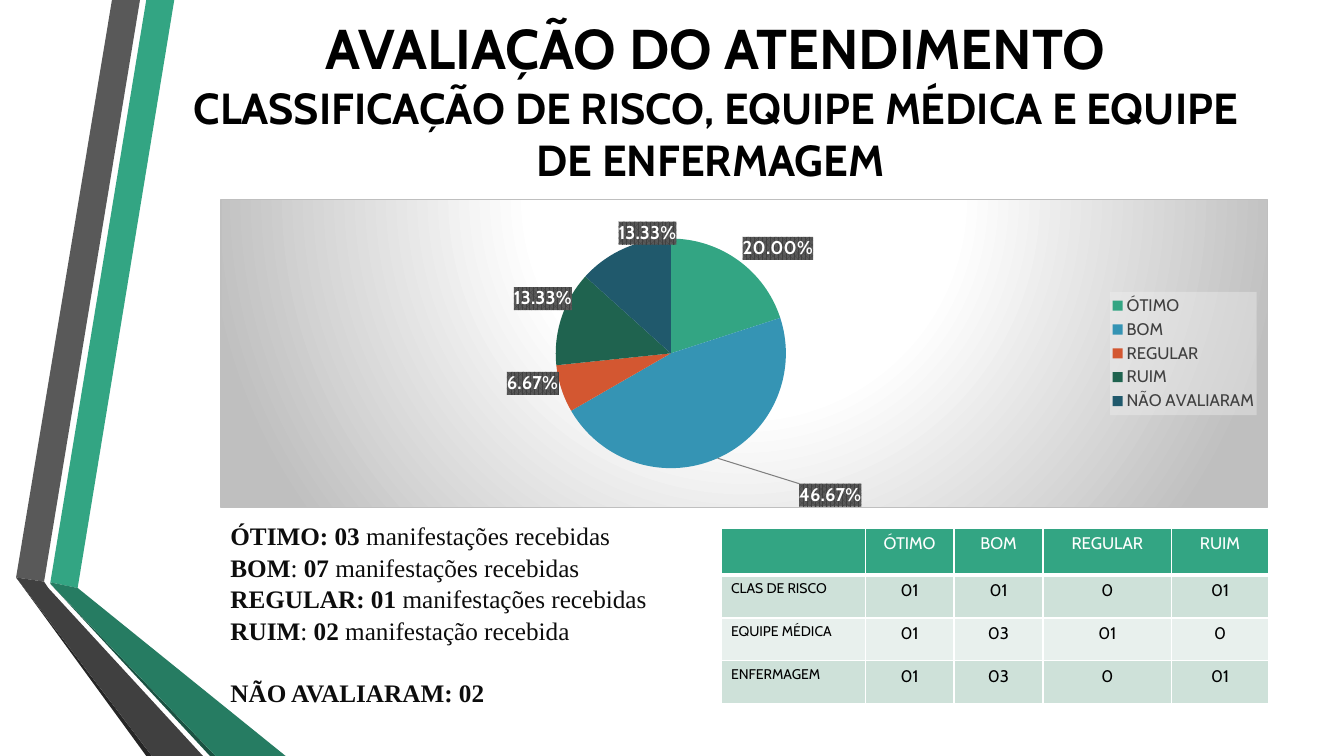
from dataclasses import dataclass

from lxml import etree
from pptx import Presentation
from pptx.chart.data import CategoryChartData
from pptx.dml.color import RGBColor
from pptx.enum.chart import XL_CHART_TYPE, XL_LEGEND_POSITION
from pptx.enum.text import MSO_ANCHOR, PP_ALIGN
from pptx.oxml import parse_xml
from pptx.util import Pt

PIE = XL_CHART_TYPE.PIE
RIGHT = XL_LEGEND_POSITION.RIGHT
MIDDLE = MSO_ANCHOR.MIDDLE
LEFT, CENTER = PP_ALIGN.LEFT, PP_ALIGN.CENTER
NS_A = "http://schemas.openxmlformats.org/drawingml/2006/main"
NS_C = "http://schemas.openxmlformats.org/drawingml/2006/chart"
NS = f'xmlns:a="{NS_A}" xmlns:c="{NS_C}"'


@dataclass(frozen=True)
class Theme:
    sans: str = "Cabin"
    serif: str = "Times New Roman"
    black: str = "000000"
    white: str = "FFFFFF"
    green: str = "33A583"
    ink: str = "0D0D0D"
    gray: str = "404040"
    edge: str = "BFBFBF"
    slices: tuple = ("33A583", "3594B4", "D35731", "1F634F", "20596C")
    rows: tuple = ("CEE1D9", "E8F0ED")
    head: float = 40
    sub: float = 31
    body: float = 18
    label: float = 13.3
    cell: float = 12
    small: float = 10


T = Theme()

# Fill and corners of each band, in points from the top left of the slide
BANDS = [
    (T.green, [(36, 416), (55.5, 420), (124.5, 0), (104.5, 0)]),
    ("595959", [(100, 0), (80, 0), (11.5, 412.5), (31.5, 415.5)]),
    ("262626", [(11.5, 412.5), (104.5, 540), (108.5, 540)]),
    ("1A5242", [(36, 417), (150, 540), (154, 540)]),
    ("267C62", [(36, 416), (36, 417), (154, 540), (204, 540), (55.5, 420)]),
    (T.gray, [(145, 540), (34.5, 420), (31.5, 415.5), (11.5, 412.5), (108.5, 540)]),
]

# Name, share in percent, shift of the label from the slice centre
VOTES = [
    ("ÓTIMO", 20, (0.07, -0.19)),
    ("BOM", 46.67, (0.13, 0.29)),
    ("REGULAR", 6.67, (-0.08, 0.04)),
    ("RUIM", 13.33, (-0.07, -0.12)),
    ("NÃO AVALIARAM", 13.33, (0, -0.22)),
]

# Lines of (text, bold) runs
NOTES = [
    [("ÓTIMO: 03 ", True), ("manifestações recebidas", False)],
    [("BOM", True), (": ", False), ("07 ", True), ("manifestações recebidas", False)],
    [("REGULAR: 01 ", True), ("manifestações recebidas", False)],
    [("RUIM", True), (": ", False), ("02 ", True), ("manifestação recebida", False)],
    [("NÃO AVALIARAM: 02", True)],
]

GRID = [
    ["", "ÓTIMO", "BOM", "REGULAR", "RUIM"],
    ["CLAS DE RISCO", "01", "01", "0", "01"],
    ["EQUIPE MÉDICA", "01", "03", "01", "0"],
    ["ENFERMAGEM", "01", "03", "0", "01"],
]
WIDTHS = [103, 63.5, 63.5, 92, 69]
HEIGHTS = [33.5, 30.5, 30.5, 30.5]


def style(font, size, color, bold=False, face=T.sans):
    font.name, font.size, font.bold = face, Pt(size), bold
    font.color.rgb = RGBColor.from_string(color)


def add_run(para, text, *look):
    run = para.add_run()
    run.text = text
    style(run.font, *look)


def add_frame(slide, box):
    frame = slide.shapes.add_textbox(*map(Pt, box)).text_frame
    frame.word_wrap = True
    return frame


def add_bands(slide, left, top):
    for color, dots in BANDS:
        spots = [(Pt(left + x), Pt(top + y)) for x, y in dots]
        pen = slide.shapes.build_freeform(*spots[0])
        pen.add_line_segments(spots[1:])
        band = pen.convert_to_shape()
        band.shadow.inherit = False
        band.fill.solid()
        band.fill.fore_color.rgb = RGBColor.from_string(color)
        band.line.fill.background()


def add_title(slide, box):
    frame = add_frame(slide, box)
    frame.vertical_anchor = MIDDLE
    para = frame.paragraphs[0]
    para.alignment = CENTER
    add_run(para, "AVALIAÇÃO DO ATENDIMENTO", T.head, T.black, True)
    para.add_line_break()
    add_run(para, "CLASSIFICAÇÃO DE RISCO, EQUIPE MÉDICA E EQUIPE DE ENFERMAGEM ",
            T.sub, T.black, True)


def solid(color, alpha=100):
    return (f'<a:solidFill><a:srgbClr val="{color}">'
            f'<a:alpha val="{alpha * 1000}"/></a:srgbClr></a:solidFill>')


def place(x, y, size=None, inner=False):
    """Manual chart layout: a shift, or with a size a fixed place."""
    target = '<c:layoutTarget val="inner"/>' if inner else ""
    modes = '<c:xMode val="edge"/><c:yMode val="edge"/>' if size else ""
    span = f'<c:w val="{size[0]}"/><c:h val="{size[1]}"/>' if size else ""
    return parse_xml(f'<c:layout {NS}><c:manualLayout>{target}{modes}<c:x val="{x}"/>'
                     f'<c:y val="{y}"/>{span}</c:manualLayout></c:layout>')


def make_labels():
    look = (
        '<c:numFmt formatCode="0.00%" sourceLinked="0"/><c:spPr><a:pattFill prst="pct75">'
        f'<a:fgClr><a:srgbClr val="{T.gray}"/></a:fgClr>'
        '<a:bgClr><a:srgbClr val="595959"/></a:bgClr></a:pattFill></c:spPr>'
        f'<c:txPr><a:bodyPr/><a:p><a:pPr><a:defRPr sz="{round(T.label * 100)}" b="1">'
        f'{solid(T.white)}<a:latin typeface="{T.sans}"/></a:defRPr></a:pPr>'
        '<a:endParaRPr lang="pt-BR"/></a:p></c:txPr><c:dLblPos val="ctr"/>'
        '<c:showLegendKey val="0"/><c:showVal val="0"/><c:showCatName val="0"/>'
        '<c:showSerName val="0"/><c:showPercent val="1"/><c:showBubbleSize val="0"/>')
    items = "".join(
        f'<c:dLbl><c:idx val="{i}"/>{etree.tostring(place(*shift)).decode()}{look}</c:dLbl>'
        for i, (_, _, shift) in enumerate(VOTES))
    lead = (f'<c:showLeaderLines val="1"/><c:leaderLines><c:spPr><a:ln w="9525">'
            f'{solid("7F7F7F")}</a:ln></c:spPr></c:leaderLines>')
    return parse_xml(f'<c:dLbls {NS}>{items}{look}{lead}</c:dLbls>')


def add_pie(slide, box):
    data = CategoryChartData()
    data.categories = [vote[0] for vote in VOTES]
    data.add_series("Series 1", [vote[1] for vote in VOTES])
    chart = slide.shapes.add_chart(PIE, *map(Pt, box), data).chart
    style(chart.font, T.small, T.black)
    chart.has_title = False
    plot = chart.plots[0]
    plot.vary_by_categories = True
    series = plot.series[0]
    for i, color in enumerate(T.slices):
        fill = series.points[i].format.fill
        fill.solid()
        fill.fore_color.rgb = RGBColor.from_string(color)
    series._element.find(f"{{{NS_C}}}cat").addprevious(make_labels())

    chart.has_legend = True
    legend = chart.legend
    legend.position, legend.include_in_layout = RIGHT, False
    style(legend.font, T.cell, T.gray)
    root = legend._element
    for old in root.findall(f"{{{NS_C}}}layout"):
        root.remove(old)
    root.find(f"{{{NS_C}}}legendPos").addnext(place(0.85, 0.3, (0.14, 0.4)))
    root.find(f"{{{NS_C}}}txPr").addprevious(
        parse_xml(f'<c:spPr {NS}>{solid("F2F2F2", 39)}</c:spPr>'))

    body = chart._chartSpace.find(f"{{{NS_C}}}chart")
    area = body.find(f"{{{NS_C}}}plotArea")
    for old in area.findall(f"{{{NS_C}}}layout"):
        area.remove(old)
    area.insert(0, place(0.32, 0.12, (0.22, 0.76), True))
    stops = "".join(f'<a:gs pos="{at}000"><a:srgbClr val="{color}"/></a:gs>'
                    for at, color in ((0, T.white), (39, T.white), (100, T.edge)))
    body.addnext(parse_xml(
        f'<c:spPr {NS}><a:gradFill><a:gsLst>{stops}</a:gsLst><a:path path="circle">'
        '<a:fillToRect l="50000" t="-80000" r="50000" b="180000"/></a:path></a:gradFill>'
        f'<a:ln w="9525">{solid(T.edge)}</a:ln></c:spPr>'))


def add_notes(slide, box):
    frame = add_frame(slide, box)
    for i, runs in enumerate(NOTES):
        para = frame.add_paragraph() if i else frame.paragraphs[0]
        para.line_spacing = 1.05
        for text, bold in runs:
            add_run(para, text, T.body, T.ink, bold, T.serif)
    para.space_before = Pt(21.7)


def add_grid(slide, left, top):
    frame = slide.shapes.add_table(len(GRID), len(WIDTHS), Pt(left), Pt(top),
                                   Pt(sum(WIDTHS)), Pt(sum(HEIGHTS)))
    table = frame.table
    for col, width in zip(table.columns, WIDTHS):
        col.width = Pt(width)
    for r, line in enumerate(GRID):
        table.rows[r].height = Pt(HEIGHTS[r])
        for c, text in enumerate(line):
            cell = table.cell(r, c)
            props = cell._tc.get_or_add_tcPr()
            for side in "LRTB":
                wide = Pt(3 if (r, side) == (0, "B") else 1)
                props.append(parse_xml(f'<a:ln{side} {NS} w="{wide}">{solid(T.white)}</a:ln{side}>'))
            cell.fill.solid()
            cell.fill.fore_color.rgb = RGBColor.from_string(T.rows[(r - 1) % 2] if r else T.green)
            para = cell.text_frame.paragraphs[0]
            para.alignment = CENTER if c else LEFT
            if text:
                add_run(para, text, T.cell if c else T.small, T.black if r else T.white)


def main():
    deck = Presentation()
    deck.slide_width, deck.slide_height = Pt(960), Pt(540)
    slide = deck.slides.add_slide(deck.slide_layouts[6])
    add_bands(slide, 0, 0)
    add_title(slide, (116.5, 0, 789, 142))
    add_pie(slide, (157.5, 142, 748, 221))
    add_notes(slide, (157.5, 367, 331, 160))
    add_grid(slide, 515, 377.5)
    deck.save("out.pptx")


if __name__ == "__main__":
    main()
